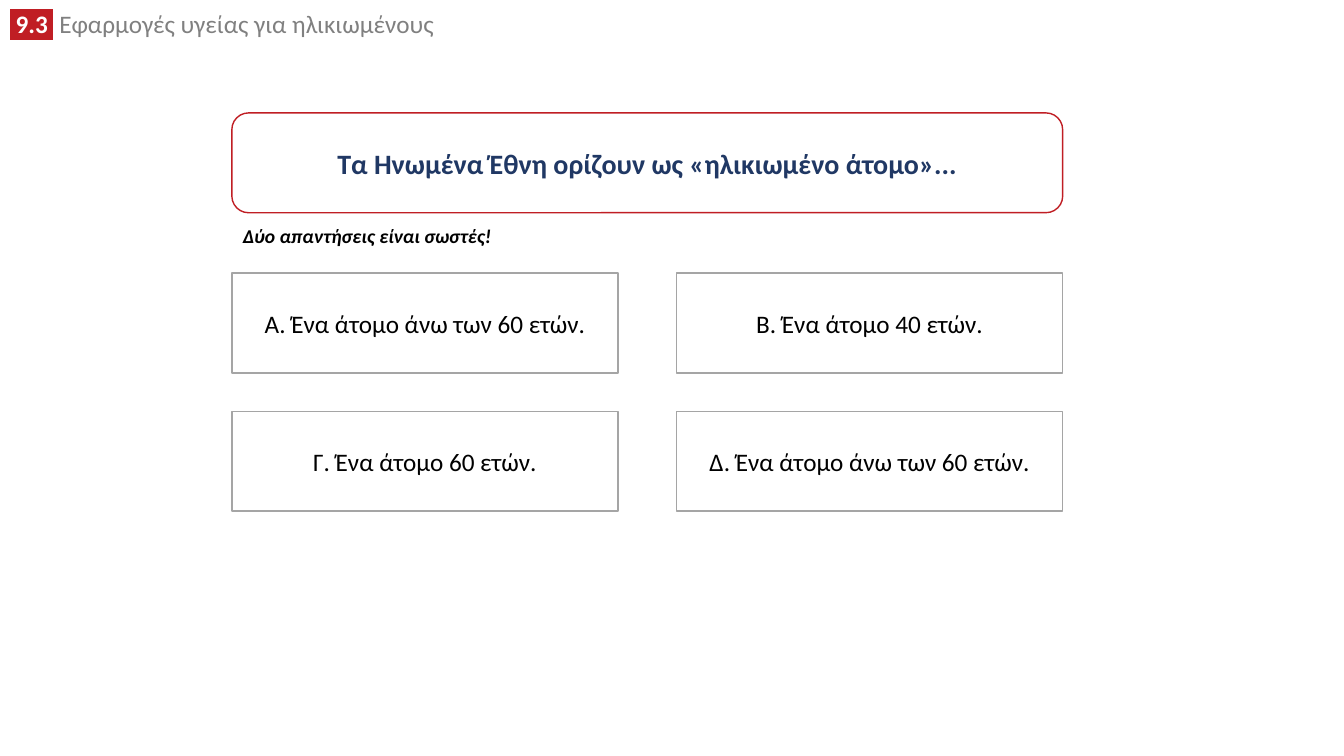
import pptx
import pptx.util
import pptx.dml.color
import pptx.enum.shapes
import pptx.enum.text
import pptx.oxml
import pptx.oxml.ns

Inches = pptx.util.Inches
RGB = pptx.dml.color.RGBColor.from_string
SHAPE = pptx.enum.shapes.MSO_SHAPE
ALIGN = pptx.enum.text.PP_ALIGN
ANCHOR = pptx.enum.text.MSO_ANCHOR
AUTO_SIZE = pptx.enum.text.MSO_AUTO_SIZE

theme = {
    "font": "Calibri",
    "red": "C01E24", "navy": "203864", "gray": "808080",
    "border": "A5A5A5", "white": "FFFFFF", "black": "000000",
    "question": 20, "body": 18, "hint": 14,
}


def add_text(sp, text, size=theme["body"], color=theme["black"], bold=False,
             italic=False, align=ALIGN.LEFT, highlight=None):
    p = sp.text_frame.paragraphs[0]
    p.alignment = align
    r = p.add_run()
    r.text = text
    r.font.size = pptx.util.Pt(size)
    r.font.bold = bold
    r.font.italic = italic
    r.font.color.rgb = RGB(color)
    if highlight:
        r.font.fill._xPr.append(pptx.oxml.parse_xml(
            f'<a:highlight {pptx.oxml.ns.nsdecls("a")}>'
            f'<a:srgbClr val="{highlight}"/></a:highlight>'))
    r.font.name = theme["font"]


def add_box(kind, left, top, width, height, border):
    sp = s.shapes.add_shape(kind, Inches(left), Inches(top), Inches(width), Inches(height))
    sp.shadow.inherit = False
    sp.fill.solid()
    sp.fill.fore_color.rgb = RGB(theme["white"])
    sp.line.color.rgb = RGB(border)
    sp.line.width = pptx.util.Pt(1)
    sp.text_frame.word_wrap = True
    sp.text_frame.vertical_anchor = ANCHOR.MIDDLE
    return sp


prs = pptx.Presentation()
prs.slide_width = Inches(13.33)
prs.slide_height = Inches(7.5)
s = prs.slides.add_slide(prs.slide_layouts[6])

heading = s.shapes.add_textbox(Inches(0), Inches(0.09), Inches(9.52), Inches(0.35))
heading.text_frame.word_wrap = True
heading.text_frame.auto_size = AUTO_SIZE.SHAPE_TO_FIT_TEXT
heading.text_frame.paragraphs[0].line_spacing = 0.8
add_text(heading, " 9.3 ", color=theme["white"], bold=True, highlight=theme["red"])
add_text(heading, " Εφαρμογές υγείας για ηλικιωμένους", color=theme["gray"])

left, box_height = 2.3, 0.99
question = add_box(SHAPE.ROUNDED_RECTANGLE, left, 1.12, 8.24, box_height, theme["red"])
add_text(question, "Τα Ηνωμένα Έθνη ορίζουν ως «ηλικιωμένο άτομο»...",
         size=theme["question"], color=theme["navy"], bold=True, align=ALIGN.CENTER)

answers = [
    "A. Ένα άτομο άνω των 60 ετών.",
    "B. Ένα άτομο 40 ετών.",
    "Γ. Ένα άτομο 60 ετών.",
    "Δ. Ένα άτομο άνω των 60 ετών.",
]
for i, answer in enumerate(answers):
    row, col = divmod(i, 2)
    sp = add_box(SHAPE.RECTANGLE, left + col * 4.41, 2.71 + row * 1.37,
                 3.83, box_height, theme["border"])
    add_text(sp, answer, align=ALIGN.CENTER)

hint = s.shapes.add_textbox(Inches(2.31), Inches(2.17), Inches(2.68), Inches(0.34))
hint.text_frame.word_wrap = False
hint.text_frame.auto_size = AUTO_SIZE.SHAPE_TO_FIT_TEXT
add_text(hint, "Δύο απαντήσεις είναι σωστές!", size=theme["hint"], bold=True, italic=True)

prs.save("out.pptx")
